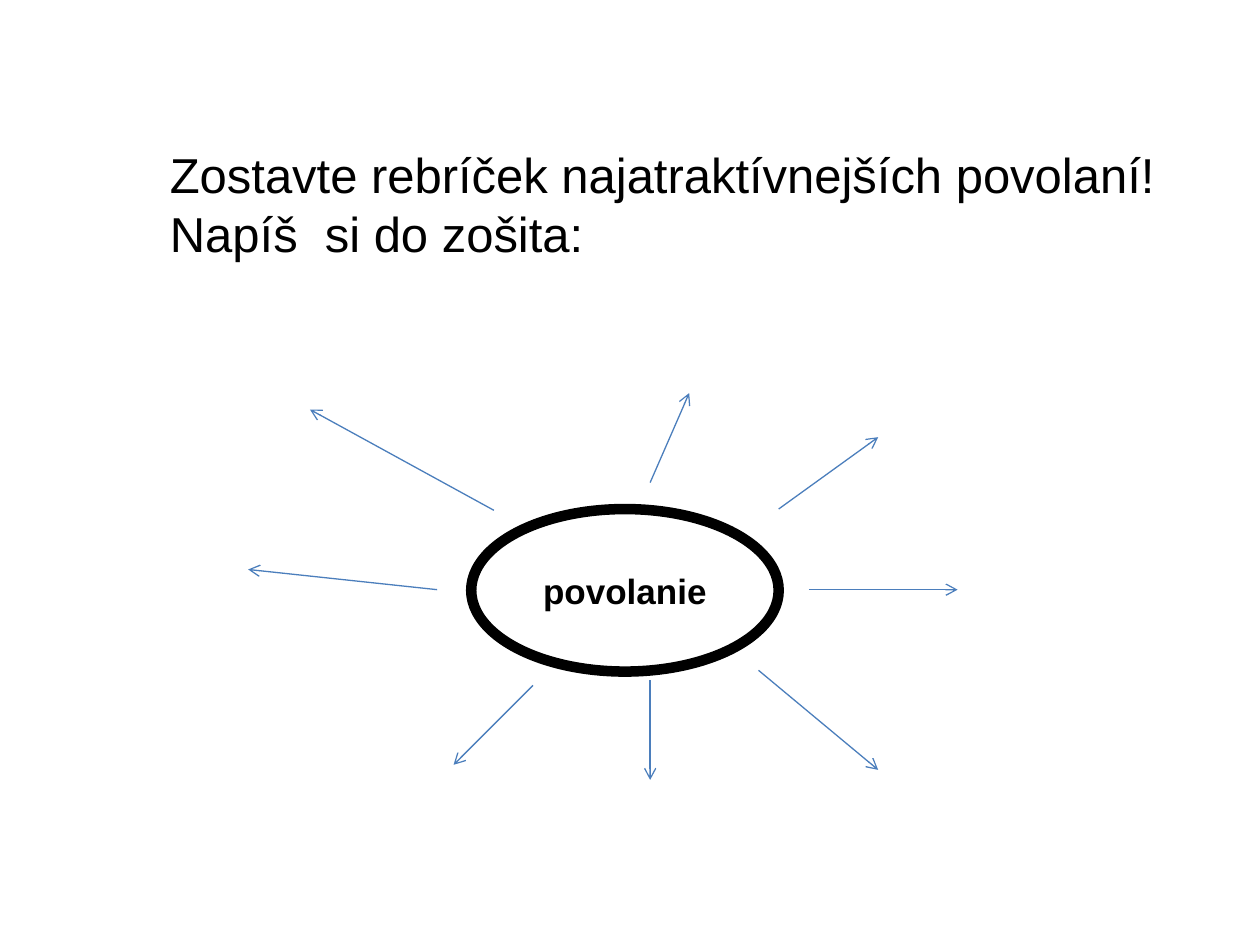
from lxml.etree import SubElement
from pptx import Presentation
from pptx.dml.color import RGBColor
from pptx.enum.shapes import MSO_CONNECTOR, MSO_SHAPE
from pptx.enum.text import MSO_ANCHOR, PP_ALIGN
from pptx.oxml.ns import qn
from pptx.util import Inches, Pt

COLORS = {"ink": "000000", "paper": "FFFFFF", "ray": "4B7EBC"}
FONT = "Arial"
COLUMNS, ROWS = 10, 7.5

RAYS = [
    ((5.16, 3.83), (5.47, 3.12)),
    ((6.18, 4.04), (6.97, 3.47)),
    ((6.42, 4.68), (7.6, 4.68)),
    ((6.02, 5.32), (6.97, 6.11)),
    ((5.16, 5.4), (5.16, 6.19)),
    ((4.23, 5.44), (3.6, 6.07)),
    ((3.47, 4.68), (1.97, 4.52)),
    ((3.92, 4.05), (2.46, 3.25)),
]


def color(name):
    return RGBColor.from_string(COLORS[name])


def write(frame, *lines, size, bold=False, align=PP_ALIGN.LEFT, anchor=MSO_ANCHOR.MIDDLE):
    frame.word_wrap = True
    frame.vertical_anchor = anchor
    for number, line in enumerate(lines):
        paragraph = frame.add_paragraph() if number else frame.paragraphs[0]
        paragraph.alignment = align
        run = paragraph.add_run()
        run.text = line
        run.font.name = FONT
        run.font.size = Pt(size)
        run.font.bold = bold
        run.font.color.rgb = color("ink")


class MindMap:
    def __init__(self, deck):
        self.slide = deck.slides.add_slide(deck.slide_layouts[6])
        self.column = deck.slide_width / COLUMNS
        self.row = deck.slide_height / ROWS
        background = self.slide.background.fill
        background.solid()
        background.fore_color.rgb = color("paper")

    def place(self, x, y):
        return round(x * self.column), round(y * self.row)

    def task(self, x, y, width, height, *lines):
        box = self.slide.shapes.add_textbox(*self.place(x, y), *self.place(width, height))
        write(box.text_frame, *lines, size=28, anchor=MSO_ANCHOR.BOTTOM)

    def topic(self, x, y, width, height, word):
        oval = self.slide.shapes.add_shape(
            MSO_SHAPE.OVAL, *self.place(x, y), *self.place(width, height))
        oval.shadow.inherit = False
        oval.fill.solid()
        oval.fill.fore_color.rgb = color("paper")
        oval.line.color.rgb = color("ink")
        oval.line.width = Pt(6)
        write(oval.text_frame, word, size=20, bold=True, align=PP_ALIGN.CENTER)

    def ray(self, start, end):
        arrow = self.slide.shapes.add_connector(
            MSO_CONNECTOR.STRAIGHT, *self.place(*start), *self.place(*end))
        arrow.line.color.rgb = color("ray")
        arrow.line.width = Pt(0.75)
        SubElement(arrow.line._get_or_add_ln(), qn("a:tailEnd"), type="arrow")
        SubElement(arrow._element.spPr, qn("a:effectLst"))


def main():
    deck = Presentation()
    deck.slide_width, deck.slide_height = Inches(10), Inches(7.5)
    mind_map = MindMap(deck)
    mind_map.task(1.25, 0.62, 8.12, 1.51,
                  "Zostavte rebríček najatraktívnejších povolaní!", "Napíš  si do zošita:")
    mind_map.topic(3.74, 4.04, 2.44, 1.29, "povolanie")
    for start, end in RAYS:
        mind_map.ray(start, end)
    deck.save("out.pptx")


if __name__ == "__main__":
    main()
